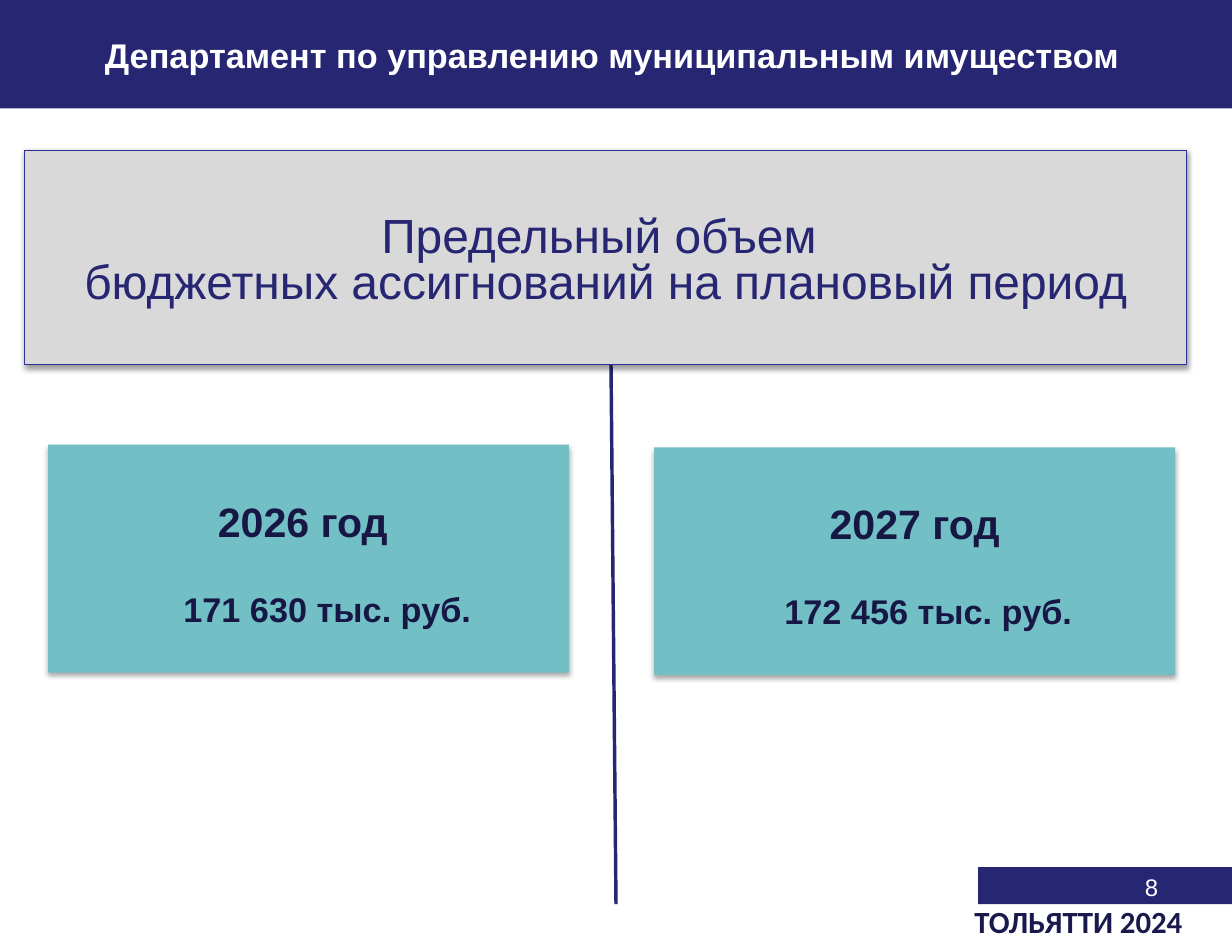
import pptx
import pptx.dml.color
import pptx.enum.shapes
import pptx.enum.text
import pptx.oxml
import pptx.oxml.ns
import pptx.util

Pt = pptx.util.Pt
Color = pptx.dml.color.RGBColor.from_string
Align = pptx.enum.text.PP_ALIGN
Anchor = pptx.enum.text.MSO_ANCHOR
RECTANGLE = pptx.enum.shapes.MSO_SHAPE.RECTANGLE

THEME = {
    "colors": {
        "navy": "262673", "footer": "19194D", "card_text": "171745",
        "white": "FFFFFF", "grey": "D9D9D9", "teal": "72BFC5", "border": "2F2F98",
    },
    "sizes": {"title": 20, "statement": 28, "year": 24, "amount": 20, "number": 14, "footer": 18},
}
COLORS, SIZES = THEME["colors"], THEME["sizes"]


def add_box(slide, bounds, fill, shadow_opacity=0, shadow_distance=0):
    """Add a borderless rectangle, with a soft downward shadow if opacity (%) is given."""
    box = slide.shapes.add_shape(RECTANGLE, *map(Pt, bounds))
    box.fill.solid()
    box.fill.fore_color.rgb = Color(COLORS[fill])
    box.line.fill.background()
    box.shadow.inherit = False
    if shadow_opacity:
        effects = box._element.spPr.find(pptx.oxml.ns.qn("a:effectLst"))
        effects.append(pptx.oxml.parse_xml(
            f'<a:outerShdw {pptx.oxml.ns.nsdecls("a")} blurRad="{Pt(3.1)}" '
            f'dist="{Pt(shadow_distance)}" dir="5400000" rotWithShape="0">'
            f'<a:srgbClr val="000000"><a:alpha val="{shadow_opacity * 1000}"/></a:srgbClr>'
            '</a:outerShdw>'))
    return box


def write(shape, lines, frame_format=None):
    """Fill a shape with (text, size name, color name, bold, paragraph format) lines."""
    frame = shape.text_frame
    frame_values = {"word_wrap": True, "auto_size": pptx.enum.text.MSO_AUTO_SIZE.NONE,
                    "vertical_anchor": Anchor.TOP, **(frame_format or {})}
    for name, value in frame_values.items():
        setattr(frame, name, value)
    for index, (text, size, color, bold, paragraph_format) in enumerate(lines):
        paragraph = frame.add_paragraph() if index else frame.paragraphs[0]
        paragraph.text = text
        for name, value in paragraph_format.items():
            setattr(paragraph, name, value)
        font_values = {"name": "Calibri" if size == "footer" else "Arial",
                       "size": Pt(SIZES[size]), "bold": bold}
        for name, value in font_values.items():
            setattr(paragraph.font, name, value)
        paragraph.font.color.rgb = Color(COLORS[color])


presentation = pptx.Presentation()
presentation.slide_width, presentation.slide_height = Pt(720), Pt(555.84)
slide = presentation.slides.add_slide(presentation.slide_layouts[5])

centered = {"alignment": Align.CENTER}
tight = {"alignment": Align.CENTER, "line_spacing": 0.8}

# Header
title = slide.shapes.title
for name, value in {"left": 0, "top": 0, "width": 720, "height": 63.36}.items():
    setattr(title, name, Pt(value))
title.fill.solid()
title.fill.fore_color.rgb = Color(COLORS["navy"])
write(title, [("Департамент по управлению муниципальным имуществом", "title", "white", True, tight)],
      {"vertical_anchor": Anchor.MIDDLE, "margin_left": Pt(2.8), "margin_top": Pt(8.6),
       "margin_right": Pt(7.2), "margin_bottom": Pt(3.6)})

# Divider between the two years
divider = slide.shapes.add_connector(
    pptx.enum.shapes.MSO_CONNECTOR.STRAIGHT, Pt(357.1), Pt(213.1), Pt(360), Pt(528.5))
divider.line.color.rgb = Color(COLORS["navy"])
divider.line.width = Pt(2)
divider._element.spPr.append(
    pptx.oxml.parse_xml(f'<a:effectLst {pptx.oxml.ns.nsdecls("a")}/>'))

# Statement
statement = add_box(slide, (14.4, 87.8, 679, 125.3), "grey", 38, 1.6)
statement.line.color.rgb = Color(COLORS["border"])
statement.line.width = Pt(0.75)
write(statement, [
    ("Предельный объем ", "statement", "navy", False, tight),
    ("бюджетных ассигнований на плановый период", "statement", "navy", False, tight),
], {"vertical_anchor": Anchor.MIDDLE, "margin_top": Pt(10)})

# Year cards: the amount is set slightly to the right of the centre
cards = [
    (28.1, 259.9, "2026 год ", "171 630 тыс. руб.", 22),
    (382.3, 261.4, "2027 год", "172 456 тыс. руб.", 16),
]
for left, top, year, amount, indent in cards:
    card = add_box(slide, (left, top, 304.5, 133.2), "teal", 35, 1.8)
    write(card, [
        (year, "year", "card_text", True, centered),
        (amount, "amount", "card_text", True, {**centered, "space_before": Pt(25)}),
    ], {"margin_top": Pt(30)})
    card.text_frame.paragraphs[1]._p.get_or_add_pPr().set("marL", str(Pt(indent)))

# Footer
add_box(slide, (571.7, 506.9, 148.3, 21.6), "navy")
footer_texts = [
    ((516.2, 506.2, 167.8, 38.9), "8", "number", "white", False, {"alignment": Align.RIGHT}),
    ((562.3, 528.5, 159.1, 25.2), "ТОЛЬЯТТИ 2024", "footer", "footer", True, {"line_spacing": 0.8}),
]
for bounds, *line in footer_texts:
    write(slide.shapes.add_textbox(*map(Pt, bounds)), [line])

presentation.save("out.pptx")
